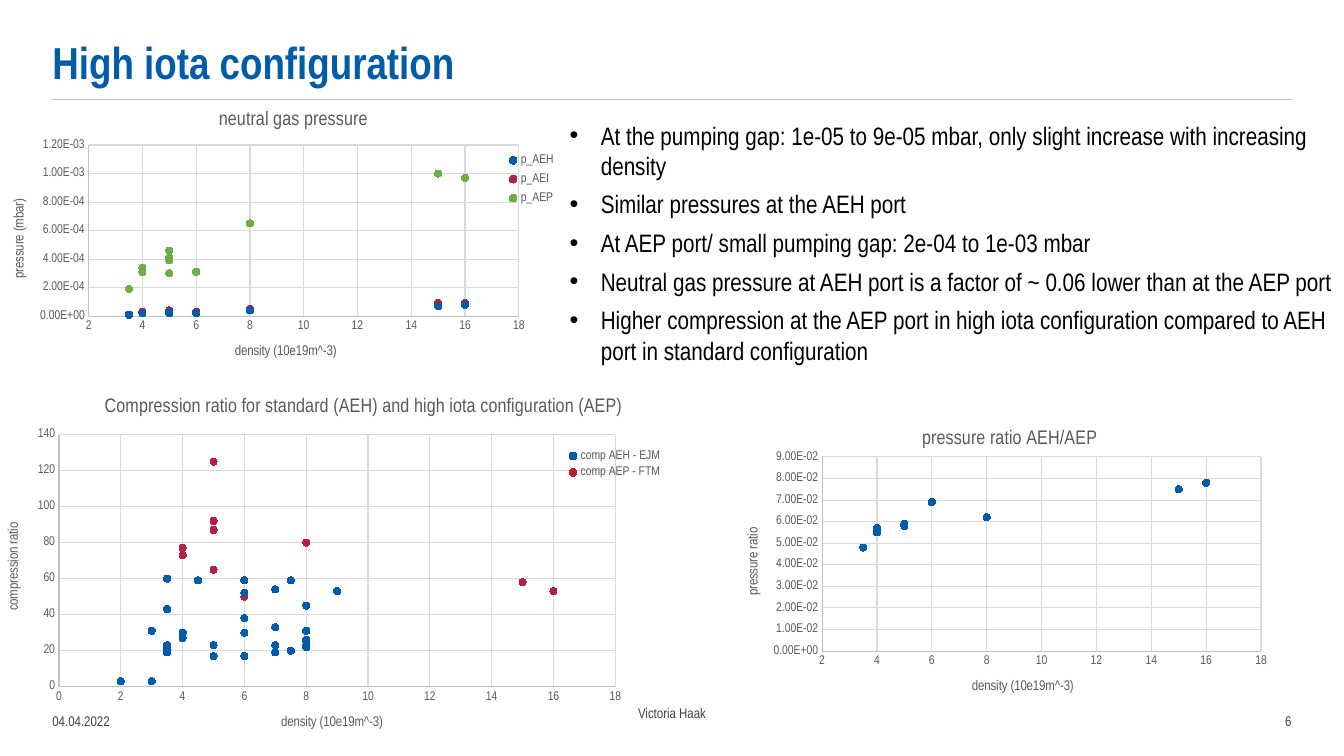
from dataclasses import dataclass

from lxml.etree import SubElement
from pptx import Presentation
from pptx.chart.data import XyChartData
from pptx.dml.color import RGBColor
from pptx.enum.chart import XL_CHART_TYPE, XL_LEGEND_POSITION, XL_MARKER_STYLE, XL_TICK_MARK
from pptx.enum.shapes import MSO_CONNECTOR
from pptx.enum.text import MSO_ANCHOR, PP_ALIGN
from pptx.oxml import parse_xml
from pptx.oxml.ns import nsdecls, qn
from pptx.util import Inches, Pt


@dataclass(frozen=True)
class Theme:
    font: str = "Arial Narrow"
    blue: str = "005BAA"
    red: str = "B42041"
    green: str = "70AD47"
    black: str = "000000"
    dark: str = "404040"
    gray: str = "595959"
    axis: str = "BFBFBF"
    grid: str = "D9D9D9"
    title: int = 32
    body: int = 18
    chart_title: int = 14
    small: int = 10
    tick: int = 9


THEME = Theme()
WIDTH, HEIGHT = Inches(13.33), Inches(7.5)

# Content: places are percent of the slide (left, top, width, height)
TITLE = "High iota configuration"
BULLETS = [
    "At the pumping gap: 1e-05 to 9e-05 mbar, only slight increase with increasing density",
    "Similar pressures at the AEH port",
    "At AEP port/ small pumping gap: 2e-04 to 1e-03 mbar",
    "Neutral gas pressure at AEH port is a factor of ~ 0.06 lower than at the AEP port",
    "Higher compression at the AEP port in high iota configuration compared to AEH port "
    "in standard configuration",
]
FOOTERS = [
    ("04.04.2022", (3.9, 92.67, 9.15, 5.33), PP_ALIGN.LEFT),
    ("Victoria Haak", (14.85, 91.6, 70.29, 5.33), PP_ALIGN.CENTER),
    ("6", (87.25, 92.67, 8.85, 5.33), PP_ALIGN.RIGHT),
]
DENSITY = [3.5, 4, 4, 5, 5, 5, 5, 6, 8, 15, 16]
STANDARD_DENSITY = ([2] + [3] * 3 + [3.5] * 8 + [4] * 2 + [4.5] + [5] * 2 + [6] * 5
                    + [7] * 4 + [7.5] * 3 + [8] * 6 + [9])

# Inner places are shares of the chart; axes are (minimum, maximum, step)
CHARTS = [
    dict(
        title="neutral gas pressure", place=(-0.9, 12.4, 45.46, 37.73),
        plot=(0.165, 0.18, 0.704, 0.6), legend=(0.84, 0.19, 0.1, 0.22),
        x_title=("density (10e19m^-3)", (0.4, 0.87)), x_scale=(2, 18, 2),
        y_title=("pressure (mbar)", (0.036, 0.36)), y_scale=(0, 12e-4, 2e-4),
        format="0.00E+00",
        series=[
            ("p_AEH", THEME.blue, DENSITY,
             [1e-5, 2e-5, 2e-5, 2e-5, 2e-5, 2e-5, 3e-5, 2e-5, 4e-5, 7e-5, 8e-5]),
            ("p_AEI", THEME.red, DENSITY,
             [1e-5, 3e-5, 3e-5, 3e-5, 2e-5, 4e-5, 4e-5, 3e-5, 5e-5, 9e-5, 9e-5]),
            ("p_AEP", THEME.green, DENSITY,
             [1.9e-4, 3.1e-4, 3.4e-4, 3.9e-4, 3e-4, 4.1e-4, 4.6e-4, 3.1e-4, 6.5e-4,
              1e-3, 9.7e-4]),
        ],
    ),
    dict(
        title="pressure ratio AEH/AEP", place=(54.54, 54.53, 41.19, 40.27),
        plot=(0.161, 0.147, 0.793, 0.638), legend=None,
        x_title=("density (10e19m^-3)", (0.427, 0.87)), x_scale=(2, 18, 2),
        y_title=("pressure ratio", (0.02, 0.37)), y_scale=(0, 0.09, 0.01),
        format="0.00E+00",
        series=[
            ("Series 1", THEME.blue, DENSITY,
             [0.048, 0.055, 0.057, 0.058, 0.059, 0.059, 0.059, 0.069, 0.062, 0.075, 0.078]),
        ],
    ),
    dict(
        title="Compression ratio for standard (AEH) and high iota configuration (AEP)",
        place=(-1.28, 50.13, 56.71, 49.07),
        plot=(0.1, 0.15, 0.73, 0.68), legend=(0.764, 0.18, 0.13, 0.1),
        x_title=("density (10e19m^-3)", (0.388, 0.9)), x_scale=(0, 18, 2),
        y_title=("compression ratio", (0.028, 0.38)), y_scale=(0, 140, 20),
        format="General",
        series=[
            ("comp AEH - EJM", THEME.blue, STANDARD_DENSITY,
             [3, 3, 31, 31, 43, 60, 23, 22, 22, 22, 19, 20, 27, 30, 59, 23, 17, 59, 30, 52,
              38, 17, 19, 33, 54, 23, 59, 20, 20, 23, 22, 25, 45, 31, 26, 53]),
            ("comp AEP - FTM", THEME.red, DENSITY,
             [23, 73, 77, 65, 125, 87, 92, 50, 80, 58, 53]),
        ],
    ),
]


def box(place):
    return [int(share * side / 100) for share, side in zip(place, (WIDTH, HEIGHT) * 2)]


def style(font, size, color, bold=False):
    font.name, font.size, font.bold = THEME.font, Pt(size), bold
    font.color.rgb = RGBColor.from_string(color)


def add_text(slide, lines, place, size, color, anchor, bold=False, margins=(0.1, 0.1)):
    frame = slide.shapes.add_textbox(*box(place)).text_frame
    frame.word_wrap, frame.vertical_anchor = True, anchor
    frame.margin_left, frame.margin_right = map(Inches, margins)
    frame.text = "\n".join(lines)
    for paragraph in frame.paragraphs:
        for run in paragraph.runs:
            style(run.font, size, color, bold)
    return frame.paragraphs


# Chart helpers
def set_layout(element, index, place, inner=False):
    for old in element.findall(qn("c:layout")):
        element.remove(old)
    layout = parse_xml(f"<c:layout {nsdecls('c')}><c:manualLayout/></c:layout>")
    settings = [("layoutTarget", "inner")] if inner else []
    settings += [("xMode", "edge"), ("yMode", "edge"), *zip("xywh", place)]
    for name, value in settings:
        SubElement(layout[0], qn(f"c:{name}")).set("val", str(value))
    element.insert(index, layout)


def style_axis(axis, title, scale, number_format, rotation):
    text, place = title
    axis.minimum_scale, axis.maximum_scale, axis.major_unit = scale
    axis.major_tick_mark = axis.minor_tick_mark = XL_TICK_MARK.NONE
    axis.has_major_gridlines = True
    for line, color in ((axis.format.line, THEME.axis),
                        (axis.major_gridlines.format.line, THEME.grid)):
        line.width = Pt(0.75)
        line.color.rgb = RGBColor.from_string(color)
    style(axis.tick_labels.font, THEME.tick, THEME.gray)
    axis.tick_labels.number_format = number_format
    axis.tick_labels.number_format_is_linked = False
    frame = axis.axis_title.text_frame
    frame.text = text
    style(frame.paragraphs[0].runs[0].font, THEME.small, THEME.gray)
    frame._txBody.find(qn("a:bodyPr")).set("rot", str(rotation))
    set_layout(axis.axis_title._element, 1, place)


def add_scatter(slide, content):
    data = XyChartData()
    for name, _, densities, values in content["series"]:
        series = data.add_series(name)
        for point in zip(densities, values):
            series.add_data_point(*point)
    chart = slide.shapes.add_chart(XL_CHART_TYPE.XY_SCATTER, *box(content["place"]), data).chart
    style(chart.font, THEME.small, THEME.black)
    chart._chartSpace.find(qn("c:txPr")).addprevious(parse_xml(
        f"<c:spPr {nsdecls('c', 'a')}><a:noFill/><a:ln><a:noFill/></a:ln></c:spPr>"))
    chart.has_title = True
    chart.chart_title.text_frame.text = content["title"]
    style(chart.chart_title.text_frame.paragraphs[0].runs[0].font, THEME.chart_title, THEME.gray)
    style_axis(chart.category_axis, content["x_title"], content["x_scale"], "General", 0)
    style_axis(chart.value_axis, content["y_title"], content["y_scale"],
               content["format"], -5400000)
    set_layout(chart._chartSpace.chart.plotArea, 0, content["plot"], inner=True)
    chart.plots[0].vary_by_categories = False
    for series, (_, color, _, _) in zip(chart.plots[0].series, content["series"]):
        series.format.line.fill.background()
        series.marker.style, series.marker.size = XL_MARKER_STYLE.CIRCLE, 5
        for part in (series.marker.format.fill, series.marker.format.line.fill):
            part.solid()
            part.fore_color.rgb = RGBColor.from_string(color)
    chart.has_legend = content["legend"] is not None
    if chart.has_legend:
        chart.legend.position = XL_LEGEND_POSITION.RIGHT
        chart.legend.include_in_layout = False
        style(chart.legend.font, THEME.tick, THEME.gray)
        set_layout(chart.legend._element, 1, content["legend"])


def main():
    presentation = Presentation()
    presentation.slide_width, presentation.slide_height = WIDTH, HEIGHT
    slide = presentation.slides.add_slide(presentation.slide_layouts[6])

    # Title and rule
    rule = slide.shapes.add_connector(MSO_CONNECTOR.STRAIGHT, *box((3.9, 13.2, 96.1, 13.2)))
    rule.line.width = Pt(1)
    rule.line.color.rgb = RGBColor.from_string(THEME.axis)
    SubElement(rule._element.spPr, qn("a:effectLst"))
    title = add_text(slide, [TITLE], (3.9, 2.8, 77.94, 9.6), THEME.title, THEME.blue,
                     MSO_ANCHOR.BOTTOM, bold=True, margins=(0, 0))
    title[0].line_spacing = 0.9

    # Footer
    for text, place, alignment in FOOTERS:
        paragraphs = add_text(slide, [text], place, THEME.small, THEME.dark,
                              MSO_ANCHOR.MIDDLE, margins=(0, 0))
        paragraphs[0].alignment = alignment

    # Findings
    findings = add_text(slide, BULLETS, (41.64, 15.2, 59.49, 38.13), THEME.body,
                        THEME.black, MSO_ANCHOR.TOP)
    for index, paragraph in enumerate(findings):
        properties = paragraph._p.get_or_add_pPr()
        properties.set("marL", str(Inches(0.31)))
        properties.set("indent", str(-Inches(0.31)))
        SubElement(properties, qn("a:buFont")).set("typeface", "Arial")
        SubElement(properties, qn("a:buChar")).set("char", "•")
        paragraph.space_before = Pt(6 if index else 0)

    # Charts
    for content in CHARTS:
        add_scatter(slide, content)
    presentation.save("out.pptx")


if __name__ == "__main__":
    main()
